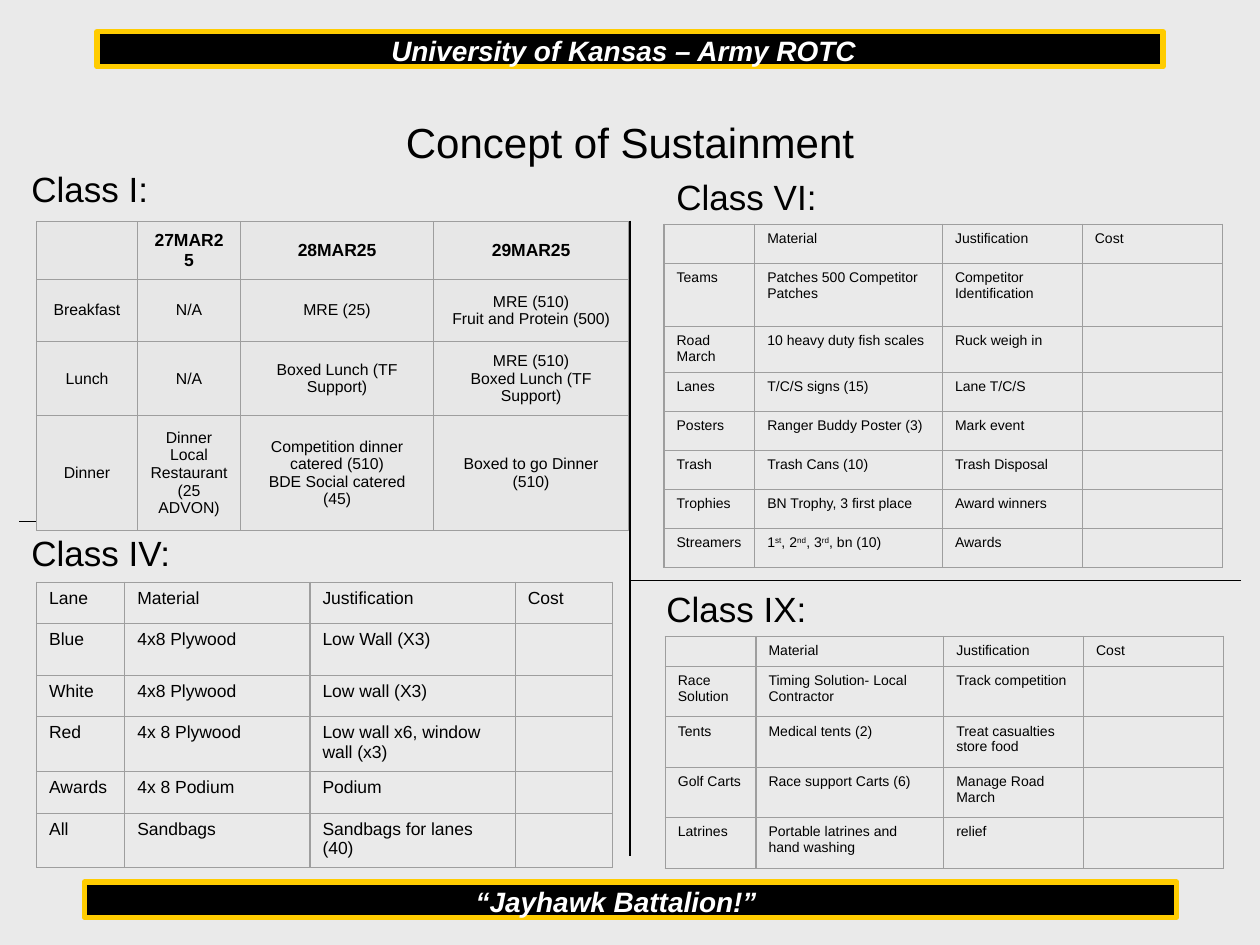
import pptx
import pptx.util
import pptx.dml.color
import pptx.enum.shapes
import pptx.enum.text
from lxml import etree
from pptx.oxml.ns import qn

Inches, Pt = pptx.util.Inches, pptx.util.Pt
ALIGN, ANCHOR = pptx.enum.text.PP_ALIGN, pptx.enum.text.MSO_ANCHOR
COLORS = {"page": "EAEAEA", "ink": "000000", "gold": "FFCC00",
          "white": "FFFFFF", "rule": "9E9E9E", "cell": "E7E7E7"}

MEALS = [
    ["", "27MAR25", "28MAR25", "29MAR25"],
    ["Breakfast", "N/A", "MRE (25)", "MRE (510)\nFruit and Protein (500)"],
    ["Lunch", "N/A", "Boxed Lunch (TF Support)",
     "MRE (510)\nBoxed Lunch (TF Support)"],
    ["Dinner", "Dinner Local Restaurant (25 ADVON)",
     "Competition dinner catered (510)\nBDE Social catered (45)",
     "Boxed to go Dinner (510)"],
]
HEADS = ["Material", "Justification", "Cost"]
LUMBER = [
    ["Lane", *HEADS],
    ["Blue", "4x8 Plywood", "Low Wall (X3)", ""],
    ["White", "4x8 Plywood", "Low wall (X3)", ""],
    ["Red", "4x 8 Plywood", "Low wall x6, window wall (x3)", ""],
    ["Awards", "4x 8 Podium", "Podium", ""],
    ["All", "Sandbags", "Sandbags for lanes (40)", ""],
]
GOODS = [
    ["", *HEADS],
    ["Teams", "Patches 500 Competitor Patches", "Competitor Identification", ""],
    ["Road March", "10 heavy duty fish scales", "Ruck weigh in", ""],
    ["Lanes", "T/C/S signs (15)", "Lane T/C/S", ""],
    ["Posters", "Ranger Buddy Poster (3)", "Mark event", ""],
    ["Trash", "Trash Cans (10)", "Trash Disposal", ""],
    ["Trophies", "BN Trophy, 3 first place", "Award winners", ""],
    ["Streamers", "1^st^, 2^nd^, 3^rd^, bn (10)", "Awards", ""],
]
GEAR = [
    ["", *HEADS],
    ["Race Solution", "Timing Solution- Local Contractor", "Track competition", ""],
    ["Tents", "Medical tents (2)", "Treat casualties store food", ""],
    ["Golf Carts", "Race support Carts (6)", "Manage Road March", ""],
    ["Latrines", "Portable latrines and hand washing", "relief", ""],
]


def rgb(name):
    return pptx.dml.color.RGBColor.from_string(COLORS[name])


def write(frame, text, size, color="ink", bold=False, italic=False,
          align=ALIGN.LEFT):
    """Fill a text frame; parts between carets are raised."""
    for i, line in enumerate(text.split("\n")):
        para = frame.paragraphs[0] if i == 0 else frame.add_paragraph()
        para.alignment = align
        if not line:
            end = etree.SubElement(para._p, qn("a:endParaRPr"))
            end.set("sz", str(size * 100))
            continue
        for j, part in enumerate(line.split("^")):
            run = para.add_run()
            run.text = part
            font = run.font
            font.name, font.size = "Arial", Pt(size)
            font.bold, font.italic = bold, italic
            font.color.rgb = rgb(color)
            if j % 2:
                run._r.get_or_add_rPr().set("baseline", "30000")


def label(slide, x, y, w, h, text, size, wrap=False, **style):
    box = slide.shapes.add_textbox(Inches(x), Inches(y), Inches(w), Inches(h))
    box.text_frame.word_wrap = wrap
    write(box.text_frame, text, size, **style)


def banner(slide, x, y, w, text, mid):
    """Black bar with gold edge; its words are centred on mid."""
    bar = slide.shapes.add_shape(pptx.enum.shapes.MSO_SHAPE.RECTANGLE,
                                 Inches(x), Inches(y), Inches(w), Inches(0.28))
    bar.shadow.inherit = False
    bar.fill.solid()
    bar.fill.fore_color.rgb = rgb("ink")
    bar.line.color.rgb = rgb("gold")
    bar.line.width = Pt(3)
    label(slide, mid - 2, y - 0.03, 4, 0.37, text, 16, wrap=True,
          color="white", bold=True, italic=True, align=ALIGN.CENTER)


def rule(slide, x1, y1, x2, y2):
    line = slide.shapes.add_connector(
        pptx.enum.shapes.MSO_CONNECTOR.STRAIGHT,
        Inches(x1), Inches(y1), Inches(x2), Inches(y2))
    line.line.color.rgb = rgb("ink")
    line.line.width = Pt(0.75)
    etree.SubElement(line._element.spPr, qn("a:effectLst"))


def edge(cell):
    """Draw thin grey borders on all four sides of a cell."""
    props = cell._tc.get_or_add_tcPr()
    for side in ("lnL", "lnR", "lnT", "lnB"):
        line = etree.SubElement(props, qn("a:" + side), w=str(Pt(0.75)))
        fill = etree.SubElement(line, qn("a:solidFill"))
        etree.SubElement(fill, qn("a:srgbClr"), val=COLORS["rule"])


def grid(slide, x, y, cols, rows, data, size, meals=False):
    table = slide.shapes.add_table(
        len(rows), len(cols), Inches(x), Inches(y),
        Inches(sum(cols)), Inches(sum(rows))).table
    table.first_row = table.horz_banding = False
    for col, width in zip(table.columns, cols):
        col.width = Inches(width)
    for r, (height, texts) in enumerate(zip(rows, data)):
        table.rows[r].height = Inches(height)
        for c, text in enumerate(texts):
            cell = table.cell(r, c)
            edge(cell)
            if meals:
                cell.fill.solid()
                cell.fill.fore_color.rgb = rgb("cell")
                cell.vertical_anchor = ANCHOR.MIDDLE
                write(cell.text_frame, text, size if r else size + 1,
                      bold=r == 0, align=ALIGN.CENTER)
            else:
                cell.fill.background()
                write(cell.text_frame, text, size)


def supply(slide, x, y, name, dx, dy, *table, **style):
    """Place a class heading at x, y and its table at an offset from it."""
    label(slide, x, y, 1.4, 0.44, name, 20)
    grid(slide, x + dx, y + dy, *table, **style)


def heading(slide, x, y, w, h):
    title = slide.shapes.title
    title.left, title.top = Inches(x), Inches(y)
    title.width, title.height = Inches(w), Inches(h)
    title.text_frame.vertical_anchor = ANCHOR.MIDDLE
    write(title.text_frame, "Concept of Sustainment", 24, align=ALIGN.CENTER)


def main():
    deck = pptx.Presentation()
    deck.slide_width, deck.slide_height = Inches(10), Inches(7.5)
    slide = deck.slides.add_slide(deck.slide_layouts[5])
    slide.background.fill.solid()
    slide.background.fill.fore_color.rgb = rgb("page")

    banner(slide, 0.77, 0.25, 8.46, "University of Kansas – Army ROTC", 4.95)
    banner(slide, 0.67, 7, 8.67, "“Jayhawk Battalion!”", 4.89)
    heading(slide, 0.5, 0.5, 9, 1.25)
    rule(slide, 5, 1.75, 5, 6.79)
    rule(slide, 5, 4.14, 0.15, 4.14)
    rule(slide, 9.85, 4.61, 5, 4.61)

    wide = [0.72, 1.49, 1.11, 1.11]
    supply(slide, 0.15, 1.28, "Class I:", 0.14, 0.48,
           [0.8, 0.82, 1.53, 1.55], [0.46, 0.49, 0.59, 0.91], MEALS, 9,
           meals=True)
    supply(slide, 0.15, 4.17, "Class IV:", 0.14, 0.45,
           [0.7, 1.47, 1.63, 0.77], [0.33, 0.41] + [0.33] * 4, LUMBER, 10)
    supply(slide, 5.27, 1.34, "Class VI:", 0, 0.44,
           wide, [0.31, 0.5] + [0.31] * 6, GOODS, 8)
    supply(slide, 5.19, 4.61, "Class IX:", 0.09, 0.44,
           wide, [0.24] + [0.4] * 4, GEAR, 8)
    deck.save("out.pptx")


if __name__ == "__main__":
    main()
